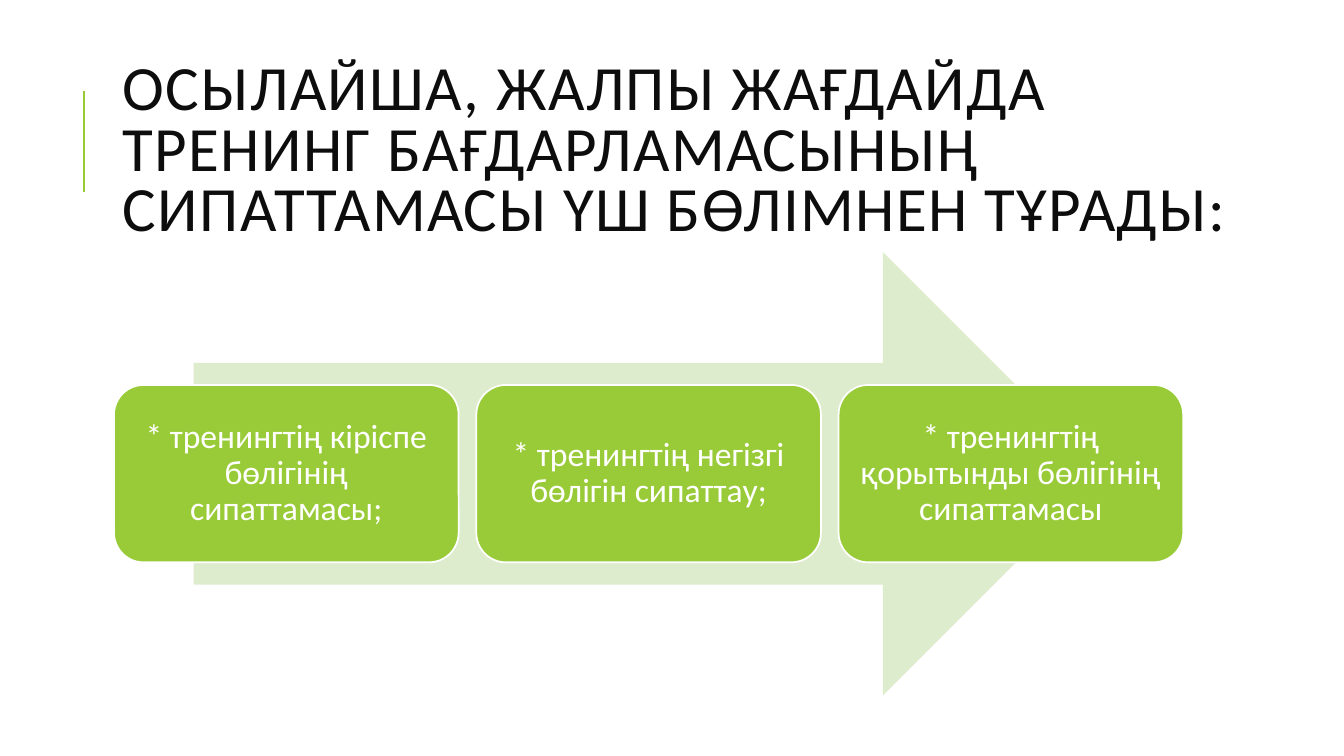
import pptx
import pptx.dml.color
import pptx.enum.shapes
import pptx.enum.text
import pptx.oxml.ns
import pptx.util
from dataclasses import dataclass
from lxml import etree

Pt = pptx.util.Pt
Shapes = pptx.enum.shapes.MSO_SHAPE
Align = pptx.enum.text.PP_ALIGN


def color(value):
    return pptx.dml.color.RGBColor.from_string(value)


@dataclass(frozen=True)
class Theme:
    font: str = "Calibri"
    title_size: float = 45
    card_size: float = 24
    ink: str = "0D0D0D"
    green: str = "99CB38"
    pale_green: str = "DEECCE"
    white: str = "FFFFFF"


THEME = Theme()

TITLE = ("ОСЫЛАЙША, ЖАЛПЫ ЖАҒДАЙДА ТРЕНИНГ БАҒДАРЛАМАСЫНЫҢ "
         "СИПАТТАМАСЫ ҮШ БӨЛІМНЕН ТҰРАДЫ:")
PARTS = [
    "* тренингтің кіріспе бөлігінің сипаттамасы;",
    "* тренингтің негізгі бөлігін сипаттау;",
    "* тренингтің қорытынды бөлігінің сипаттамасы",
]

# Card row, in points
CARD_LEFT, CARD_TOP = 81.4, 275
CARD_WIDTH, CARD_HEIGHT, CARD_GAP = 246.2, 126.7, 12.6


def style_text(shape, text, size, text_color, alignment, line_spacing):
    frame = shape.text_frame
    frame.text = text
    frame.word_wrap = True
    frame.auto_size = pptx.enum.text.MSO_AUTO_SIZE.NONE
    frame.vertical_anchor = pptx.enum.text.MSO_ANCHOR.MIDDLE
    paragraph = frame.paragraphs[0]
    paragraph.alignment = alignment
    paragraph.line_spacing = line_spacing
    paragraph.space_before = Pt(0)
    run = paragraph.runs[0]
    run.font.name = THEME.font
    run.font.size = Pt(size)
    run.font.color.rgb = color(text_color)
    return run


def set_title(slide, text):
    title = slide.shapes.title
    title.left, title.top, title.width, title.height = Pt(80.6), Pt(54.7), Pt(855.4), Pt(109.4)
    run = style_text(title, text, THEME.title_size, THEME.ink, Align.LEFT, 0.8)
    # Letter spacing of one point
    run.font._element.set("spc", "100")


def add_accent_line(slide, x, top, bottom):
    line = slide.shapes.add_connector(
        pptx.enum.shapes.MSO_CONNECTOR.STRAIGHT, Pt(x), Pt(bottom), Pt(x), Pt(top))
    line.line.color.rgb = color(THEME.green)
    line.line.width = Pt(1.5)
    etree.SubElement(line._element.spPr, pptx.oxml.ns.qn("a:effectLst"))


def add_filled_shape(slide, kind, left, top, width, height, fill):
    shape = slide.shapes.add_shape(kind, Pt(left), Pt(top), Pt(width), Pt(height))
    shape.shadow.inherit = False
    shape.fill.solid()
    shape.fill.fore_color.rgb = color(fill)
    shape.line.fill.background()
    return shape


def add_card(slide, left, text):
    card = add_filled_shape(slide, Shapes.ROUNDED_RECTANGLE, left, CARD_TOP,
                            CARD_WIDTH, CARD_HEIGHT, THEME.green)
    card.line.color.rgb = color(THEME.white)
    card.line.width = Pt(1.25)
    frame = card.text_frame
    frame.margin_left = frame.margin_right = Pt(7.2)
    frame.margin_top = frame.margin_bottom = Pt(7.2)
    style_text(card, text, THEME.card_size, THEME.white, Align.CENTER, 0.9)


def main():
    presentation = pptx.Presentation()
    presentation.slide_width, presentation.slide_height = Pt(960), Pt(540)
    slide = presentation.slides.add_slide(presentation.slide_layouts.get_by_name("Title Only"))

    # Heading with its accent line
    add_accent_line(slide, x=60, top=65, bottom=137)
    set_title(slide, TITLE)

    # Process arrow behind the three parts
    add_filled_shape(slide, Shapes.RIGHT_ARROW, 138.4, 180, 650.6, 316.8, THEME.pale_green)
    for index, text in enumerate(PARTS):
        add_card(slide, CARD_LEFT + index * (CARD_WIDTH + CARD_GAP), text)

    presentation.save("out.pptx")


if __name__ == "__main__":
    main()
